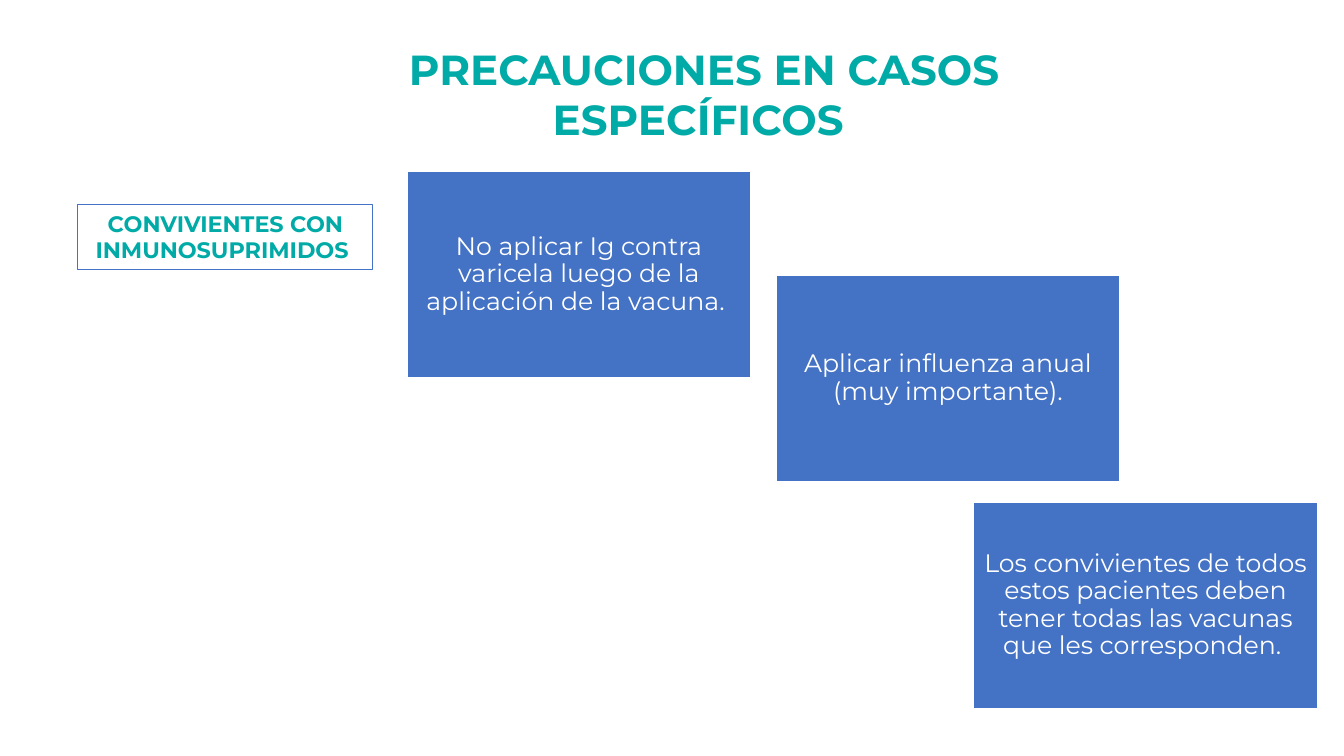
from pptx import Presentation
from pptx.dml.color import RGBColor
from pptx.enum.shapes import MSO_SHAPE as Shape
from pptx.enum.text import MSO_ANCHOR as Anchor, MSO_AUTO_SIZE as AutoSize, PP_ALIGN as Align
from pptx.util import Cm, Pt

FONT = "Montserrat"
TEAL, BLUE, WHITE = "00AAA7", "4472C4", "FFFFFF"
CARD_W, CARD_H = 8.66, 5.21

CARDS = [
    (10.26, 4.32, "No aplicar Ig contra varicela luego de la aplicación de la vacuna. "),
    (19.56, 6.93, "Aplicar influenza anual (muy importante)."),
    (24.54, 12.65, "Los convivientes de todos estos pacientes deben tener "
                   "todas las vacunas que les corresponden. "),
]


def color(hex_value):
    return RGBColor.from_string(hex_value)


def write(s, text, size, hex_value, bold=False, anchor=Anchor.TOP):
    tf = s.text_frame
    tf.text = text
    tf.word_wrap = True
    tf.auto_size = AutoSize.NONE
    tf.vertical_anchor = anchor
    p = tf.paragraphs[0]
    p.alignment = Align.CENTER
    font = p.runs[0].font
    font.name, font.size, font.bold = FONT, Pt(size), bold
    font.color.rgb = color(hex_value)
    return tf


def add_title(slide, text, x, y, w, h):
    s = slide.shapes.title
    s.left, s.top, s.width, s.height = Cm(x), Cm(y), Cm(w), Cm(h)
    write(s, text, 30, TEAL, bold=True)


def add_box(slide, x, y, w, h, line, line_width, fill=None):
    s = slide.shapes.add_shape(Shape.RECTANGLE, Cm(x), Cm(y), Cm(w), Cm(h))
    s.shadow.inherit = False
    if fill:
        s.fill.solid()
        s.fill.fore_color.rgb = color(fill)
    else:
        s.fill.background()
    s.line.color.rgb = color(line)
    s.line.width = Pt(line_width)
    return s


def add_card(slide, x, y, text):
    s = add_box(slide, x, y, CARD_W, CARD_H, WHITE, 1, BLUE)
    tf = write(s, text, 18, WHITE, anchor=Anchor.MIDDLE)
    tf.margin_left = tf.margin_right = tf.margin_top = tf.margin_bottom = Cm(0.18)
    tf.paragraphs[0].line_spacing = 0.9


def add_label(slide, text, x, y, w, h):
    s = add_box(slide, x, y, w, h, BLUE, 0.75)
    write(s, text, 16, TEAL, bold=True)


def main():
    prs = Presentation()
    prs.slide_width, prs.slide_height = Cm(33.87), Cm(19.05)
    slide = prs.slides.add_slide(prs.slide_layouts[5])

    # Heading
    add_title(slide, "PRECAUCIONES EN CASOS ESPECÍFICOS ", 6.3, 0.97, 22.89, 2.82)

    # Descending cards
    for x, y, text in CARDS:
        add_card(slide, x, y, text)

    # Group of patients
    add_label(slide, "CONVIVIENTES CON INMUNOSUPRIMIDOS ", 1.96, 5.16, 7.44, 1.63)

    prs.save("out.pptx")


if __name__ == "__main__":
    main()
